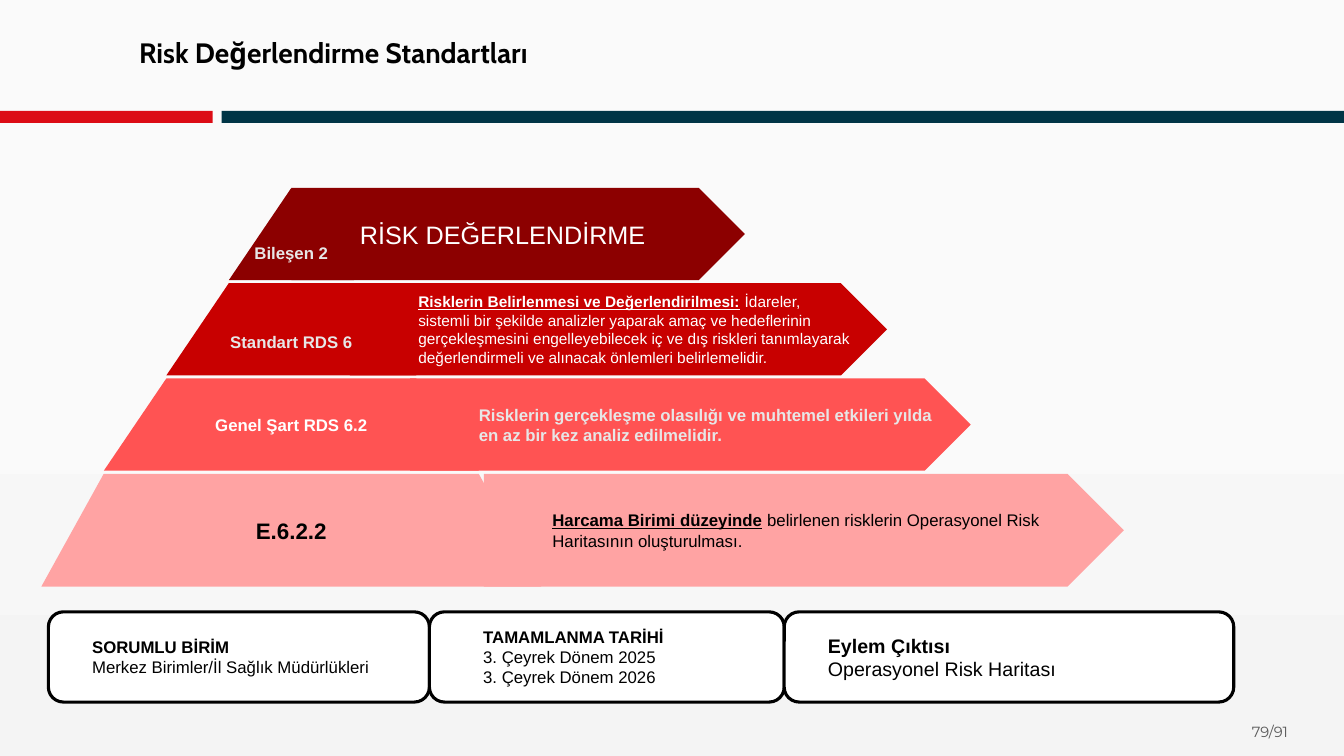
from itertools import accumulate

from pptx import Presentation
from pptx.dml.color import RGBColor
from pptx.enum.shapes import MSO_SHAPE as Preset
from pptx.enum.text import MSO_ANCHOR as Anchor, MSO_AUTO_SIZE as AutoSize, PP_ALIGN as Align
from pptx.util import Inches, Pt

COLORS = {
    "white": "FFFFFF", "black": "000000", "pale": "E7E6E6", "gray": "595959",
    "red band": "DC0C15", "navy band": "003546",
    "sky": "FAFAFA", "ground": "F4F4F4",
    "component": "8C0000", "standard": "C80000",
    "condition": "FF5353", "action": "FFA3A3",
}
GRID = Inches(0.1)
COLUMNS, ROWS = 133.33, 75

PYRAMID_TOP, TIER_PITCH, TIER_HEIGHT = 18.65, 9.45, 9.15
APEX, SLOPE = 28.9, 6.2
CARD_TOP, CARD_HEIGHT, CARD_LEFT = 60.7, 8.95, 4.8

TIERS = [
    dict(color="component", height=TIER_HEIGHT, arrow_left=28.9, arrow_width=45,
         label="Bileşen 2", label_size=12, label_color="pale", label_drop=3.7,
         text=[("RİSK DEĞERLENDİRME", "")], text_size=18, text_color="white"),
    dict(color="standard", height=TIER_HEIGHT, arrow_left=34.7, arrow_width=53.3,
         label="Standart RDS 6", label_size=12, label_color="pale", label_drop=2.4,
         text=[("Risklerin Belirlenmesi ve Değerlendirilmesi:", "bold underline"),
               (" İdareler, sistemli bir şekilde analizler yaparak amaç ve hedeflerinin "
                "gerçekleşmesini engelleyebilecek iç ve dış riskleri tanımlayarak "
                "değerlendirmeli ve alınacak önlemleri belirlemelidir.", "")],
         text_size=11, text_color="white"),
    dict(color="condition", height=TIER_HEIGHT, arrow_left=40.7, arrow_width=55.6,
         label="Genel Şart RDS 6.2", label_size=12, label_color="white", label_drop=0,
         text=[("Risklerin gerçekleşme olasılığı ve muhtemel etkileri yılda "
                "en az bir kez analiz edilmelidir.", "bold")],
         text_size=12, text_color="pale"),
    dict(color="action", height=11.2, arrow_left=48, arrow_width=63.5,
         label="E.6.2.2", label_size=16, label_color="black", label_drop=0,
         text=[("Harcama Birimi düzeyinde", "bold underline"),
               (" belirlenen risklerin Operasyonel Risk Haritasının oluşturulması.", "")],
         text_size=12, text_color="black"),
]

CARDS = [
    (37.8, 3.9, 12, ["SORUMLU BİRİM", "Merkez Birimler/İl Sağlık Müdürlükleri"]),
    (35.2, 4.9, 12, ["TAMAMLANMA TARİHİ", "3. Çeyrek Dönem 2025", "3. Çeyrek Dönem 2026"]),
    (44.6, 3.9, 14, ["Eylem Çıktısı", "Operasyonel Risk Haritası"]),
]


def cells(*counts):
    return [round(count * GRID) for count in counts]


def rgb(name):
    return RGBColor.from_string(COLORS[name])


def paint(shape, color, outline=None):
    shape.shadow.inherit = False
    shape.fill.solid()
    shape.fill.fore_color.rgb = rgb(color)
    if outline:
        shape.line.color.rgb = rgb(outline)
        shape.line.width = Pt(2.25)
    else:
        shape.line.fill.background()


def write(shape, paragraphs, size, color, font="Arial", align=Align.LEFT, anchor=Anchor.MIDDLE):
    frame = shape.text_frame
    frame.word_wrap = True
    frame.vertical_anchor = anchor
    for index, segments in enumerate(paragraphs):
        paragraph = frame.add_paragraph() if index else frame.paragraphs[0]
        paragraph.alignment = align
        for text, style in segments:
            run = paragraph.add_run()
            run.text = text
            run.font.name = font
            run.font.size = Pt(size)
            run.font.color.rgb = rgb(color)
            run.font.bold = "bold" in style
            run.font.underline = "underline" in style


def add_background(slide):
    fill = slide.background.fill
    fill.gradient()
    fill.gradient_angle = 270
    for stop, color, position in zip(fill.gradient_stops, ("sky", "ground"), (0.44, 1)):
        stop.color.rgb = rgb(color)
        stop.position = position


def add_title(slide, text):
    title = slide.shapes.title
    title.left, title.top, title.width, title.height = cells(12.8, 3, 46.6, 4.7)
    title.text_frame.auto_size = AutoSize.NONE
    write(title, [[(text, "bold")]], 20, "black", font="Cabin")
    title.text_frame.paragraphs[0].line_spacing = 0.9


def add_band(slide, left, width, color):
    band = slide.shapes.add_shape(Preset.RECTANGLE, *cells(left, 11, width, 1.2))
    paint(band, color)


def add_page_number(slide, text):
    box = slide.shapes.add_textbox(*cells(123.2, 71.2, 9, 4))
    write(box, [[(text, "")]], 10.5, "gray", font="Montserrat", anchor=Anchor.TOP)


def add_arrow(slide, top, tier):
    arrow = slide.shapes.add_shape(
        Preset.PENTAGON, *cells(tier["arrow_left"], top, tier["arrow_width"], tier["height"]))
    paint(arrow, tier["color"])
    arrow.text_frame.margin_left = cells(6.8)[0]
    write(arrow, [tier["text"]], tier["text_size"], tier["text_color"])


def add_pyramid_slice(slide, level, top, tier):
    upper, lower = SLOPE * level, SLOPE * (level + 1)
    bottom = top + tier["height"]
    corners = [(APEX - upper, top), (APEX + upper, top),
               (APEX + lower, bottom), (APEX - lower, bottom)]
    start, *others = [cells(*corner) for corner in corners]
    builder = slide.shapes.build_freeform(*start)
    builder.add_line_segments(others, close=True)
    piece = builder.convert_to_shape()
    paint(piece, tier["color"])
    frame = piece.text_frame
    frame.margin_left = frame.margin_right = frame.margin_bottom = 0
    frame.margin_top = cells(tier["label_drop"])[0]
    write(piece, [[(tier["label"], "bold")]], tier["label_size"], tier["label_color"],
          align=Align.CENTER)


def add_card(slide, left, width, indent, size, lines):
    card = slide.shapes.add_shape(
        Preset.ROUNDED_RECTANGLE, *cells(left, CARD_TOP, width, CARD_HEIGHT))
    paint(card, "white", outline="black")
    card.text_frame.margin_left = cells(indent)[0]
    heading, *details = lines
    write(card, [[(heading, "bold")]] + [[(detail, "")] for detail in details], size, "black")


def main():
    presentation = Presentation()
    presentation.slide_width, presentation.slide_height = cells(COLUMNS, ROWS)
    slide = presentation.slides.add_slide(presentation.slide_layouts.get_by_name("Title Only"))
    add_background(slide)
    add_page_number(slide, "79/91")
    add_band(slide, 0, 21.1, "red band")
    add_band(slide, 22, COLUMNS - 22, "navy band")
    add_title(slide, "Risk Değerlendirme Standartları")
    for level, tier in enumerate(TIERS):
        top = PYRAMID_TOP + level * TIER_PITCH
        add_arrow(slide, top, tier)
        add_pyramid_slice(slide, level, top, tier)
    lefts = accumulate((card[0] for card in CARDS), initial=CARD_LEFT)
    for left, card in zip(lefts, CARDS):
        add_card(slide, left, *card)
    presentation.save("out.pptx")


if __name__ == "__main__":
    main()
